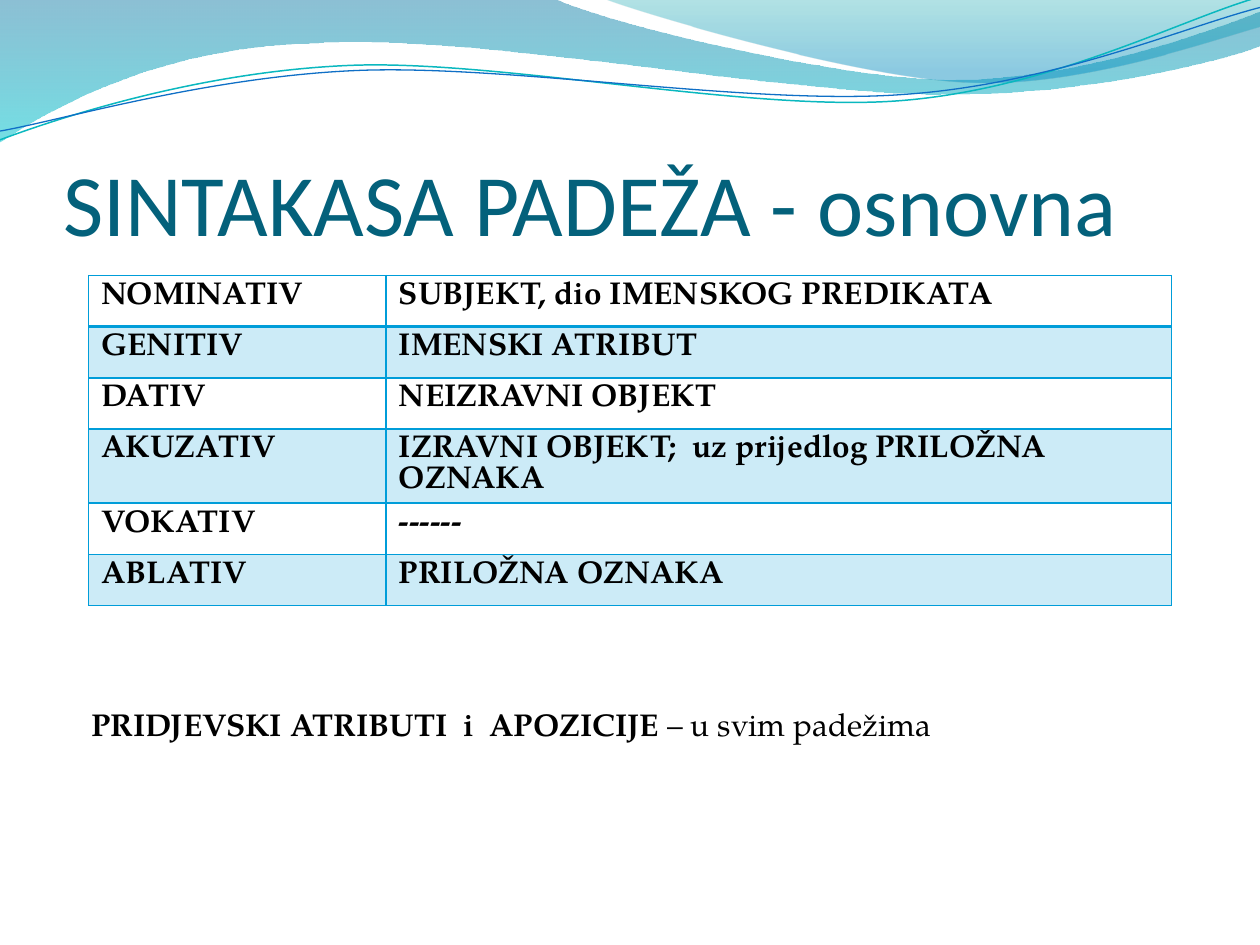
import math
from dataclasses import dataclass

from lxml import etree
from pptx import Presentation
from pptx import util as u
from pptx.dml.color import RGBColor
from pptx.enum import text
from pptx.oxml.ns import qn

COLORS = {
    "title": "04617B", "body": "000000", "border": "009DD9",
    "wave_top": "0074A1", "wave_bottom": "00C6CF",
    "crest_top": "00A1A9", "crest_bottom": "008BBF",
    "line_teal": "0AB8BF", "line_blue": "0F6FC6",
}
BODY_FONT = "TeX Gyre Pagella"
TILT = -2.7


@dataclass
class Stop:
    position: float
    color: str
    alpha: int


@dataclass
class Wave:
    """Points in pt: a tuple of 2 is a straight step, one of 6 a Bezier curve."""
    start: tuple
    steps: list
    stops: tuple = ()
    line: str = ""
    width: float = 0
    center: tuple = ()


WAVES = [
    Wave((0, 0), [
        (316.8, -0.7), (342.7, 12.2, 478.1, 45.4, 545.8, 45.4),
        (614.2, 45.4, 689.8, 18.7, 720, 6.5), (720.7, 25.9),
        (707.8, 31.7, 626.4, 54.7, 537.1, 54),
        (447.8, 54, 275, 20.2, 185, 24.5),
        (92.9, 25.9, 33.1, 59.8, -0.7, 81.4), (0, 0),
    ], stops=(Stop(0, "wave_top", 45), Stop(1, "wave_bottom", 55))),
    Wave((344.9, -0.7), [
        (366.5, 7.9, 491, 44.6, 553.7, 46.8),
        (616.3, 49.7, 691.9, 23, 720, 15.1), (720, 0), (344.9, -0.7),
    ], stops=(Stop(0, "crest_top", 30), Stop(0.8, "crest_bottom", 45))),
    Wave((0, 79.9), [
        (34.6, 67, 113.8, 41, 199.4, 37.4),
        (284.4, 33.8, 427, 64.1, 513.4, 57.6),
        (599.8, 51.1, 675.4, 10.8, 718.6, -1.4),
    ], line="line_teal", width=0.85, center=(359.3, 41.4)),
    Wave((0, 74.9), [
        (33.8, 69.1, 118.1, 43.9, 203.8, 40.3),
        (290.2, 36.7, 429.8, 60.5, 516.2, 54),
        (601.9, 48.2, 677.5, 15.1, 720, 4.3),
    ], line="line_blue", width=0.75, center=(359.6, 42.5)),
]

CASES = [
    ("NOMINATIV", "SUBJEKT, dio IMENSKOG PREDIKATA"),
    ("GENITIV", "IMENSKI ATRIBUT"),
    ("DATIV", "NEIZRAVNI OBJEKT"),
    ("AKUZATIV", "IZRAVNI OBJEKT;  uz prijedlog PRILOŽNA OZNAKA"),
    ("VOKATIV", "------"),
    ("ABLATIV", "PRILOŽNA OZNAKA"),
]


def rgb(name: str) -> RGBColor:
    return RGBColor.from_string(COLORS[name])


def set_alpha(parent, percent: int) -> None:
    """Make the colour held in an XML element partly transparent."""
    color = next(parent.iter(qn("a:srgbClr")))
    etree.SubElement(color, qn("a:alpha")).set("val", str(percent * 1000))


def place(point: tuple, center: tuple) -> tuple:
    """Give a point in EMU, with the tilt of the shape undone about its center."""
    x, y = point
    if center:
        angle = math.radians(-TILT)
        dx, dy = x - center[0], y - center[1]
        x = center[0] + dx * math.cos(angle) - dy * math.sin(angle)
        y = center[1] + dx * math.sin(angle) + dy * math.cos(angle)
    return u.Pt(x), u.Pt(y)


def bend(sp, steps: list) -> None:
    """Join each three straight segments that stand for a curve into one Bezier."""
    segments = iter(list(sp._element.iter(qn("a:lnTo"))))
    for step in steps:
        first = next(segments)
        if len(step) == 6:
            curve = etree.Element(qn("a:cubicBezTo"))
            first.addprevious(curve)
            for segment in (first, next(segments), next(segments)):
                curve.append(segment[0])
                segment.getparent().remove(segment)


def draw_wave(s, wave: Wave) -> None:
    points = [place(step[i:i + 2], wave.center)
              for step in wave.steps for i in range(0, len(step), 2)]
    builder = s.shapes.build_freeform(*place(wave.start, wave.center))
    builder.add_line_segments(points, close=bool(wave.stops))
    sp = builder.convert_to_shape()
    bend(sp, wave.steps)
    sp.shadow.inherit = False
    if wave.line:
        sp.rotation = TILT
        sp.fill.background()
        sp.line.color.rgb = rgb(wave.line)
        sp.line.width = u.Pt(wave.width)
        return
    sp.line.fill.background()
    sp.fill.gradient()
    sp.fill.gradient_angle = 270
    gradient = next(sp._element.iter(qn("a:gsLst")))
    for stop, gs, element in zip(wave.stops, sp.fill.gradient_stops, gradient):
        gs.position = stop.position
        gs.color.rgb = rgb(stop.color)
        set_alpha(element, stop.alpha)


def style_run(r, size: float, font: str, color: str, bold: bool = False) -> None:
    r.font.size = u.Pt(size)
    r.font.name = font
    r.font.color.rgb = rgb(color)
    r.font.bold = bold


def add_text(s, x: float, y: float, w: float, h: float):
    tf = s.shapes.add_textbox(u.Pt(x), u.Pt(y), u.Pt(w), u.Pt(h)).text_frame
    tf.word_wrap = True
    return tf


def add_border(cell, side: str, width: float) -> None:
    ln = etree.SubElement(cell._tc.get_or_add_tcPr(), qn(f"a:ln{side}"))
    ln.set("w", str(u.Pt(width)))
    fill = etree.SubElement(ln, qn("a:solidFill"))
    etree.SubElement(fill, qn("a:srgbClr")).set("val", COLORS["border"])


def draw_cell(cell, label: str, row: int) -> None:
    cell.text_frame.text = label
    p = cell.text_frame.paragraphs[0]
    p.line_spacing = u.Pt(17.6)
    style_run(p.runs[0], 18, BODY_FONT, "body", True)
    heavy_side = {0: "B", 1: "T"}.get(row)
    for side in "LRTB":
        add_border(cell, side, 2 if side == heavy_side else 1)
    if row % 2:
        cell.fill.solid()
        cell.fill.fore_color.rgb = rgb("border")
        set_alpha(cell._tc.tcPr.find(qn("a:solidFill")), 20)
    else:
        cell.fill.background()


def draw_table(s) -> None:
    frame = s.shapes.add_table(len(CASES), 2, u.Pt(50.7), u.Pt(157.5),
                               u.Pt(618.8), u.Pt(175.2))
    table = frame.table
    table.first_row = table.horz_banding = False
    for column, width in zip(table.columns, (170, 448.8)):
        column.width = u.Pt(width)
    for i, labels in enumerate(CASES):
        table.rows[i].height = u.Pt(29.2)
        for j, label in enumerate(labels):
            draw_cell(table.cell(i, j), label, i)
    frame.height = u.Pt(196.6)


def main() -> None:
    prs = Presentation()
    prs.slide_width, prs.slide_height = u.Pt(720), u.Pt(540)
    s = prs.slides.add_slide(prs.slide_layouts[6])
    for wave in WAVES:
        draw_wave(s, wave)

    tf = add_text(s, 36.2, 55.4, 648, 90)
    tf.margin_left = tf.margin_right = tf.margin_bottom = 0
    tf.vertical_anchor = text.MSO_ANCHOR.BOTTOM
    tf.text = "SINTAKASA PADEŽA - osnovna"
    style_run(tf.paragraphs[0].runs[0], 50, "Calibri", "title")

    draw_table(s)

    p = add_text(s, 45.1, 399.3, 528.5, 29).paragraphs[0]
    p.text = "PRIDJEVSKI ATRIBUTI  i  APOZICIJE "
    style_run(p.runs[0], 18, BODY_FONT, "body", True)
    r = p.add_run()
    r.text = "– u svim padežima"
    style_run(r, 18, BODY_FONT, "body")
    prs.save("out.pptx")


if __name__ == "__main__":
    main()
